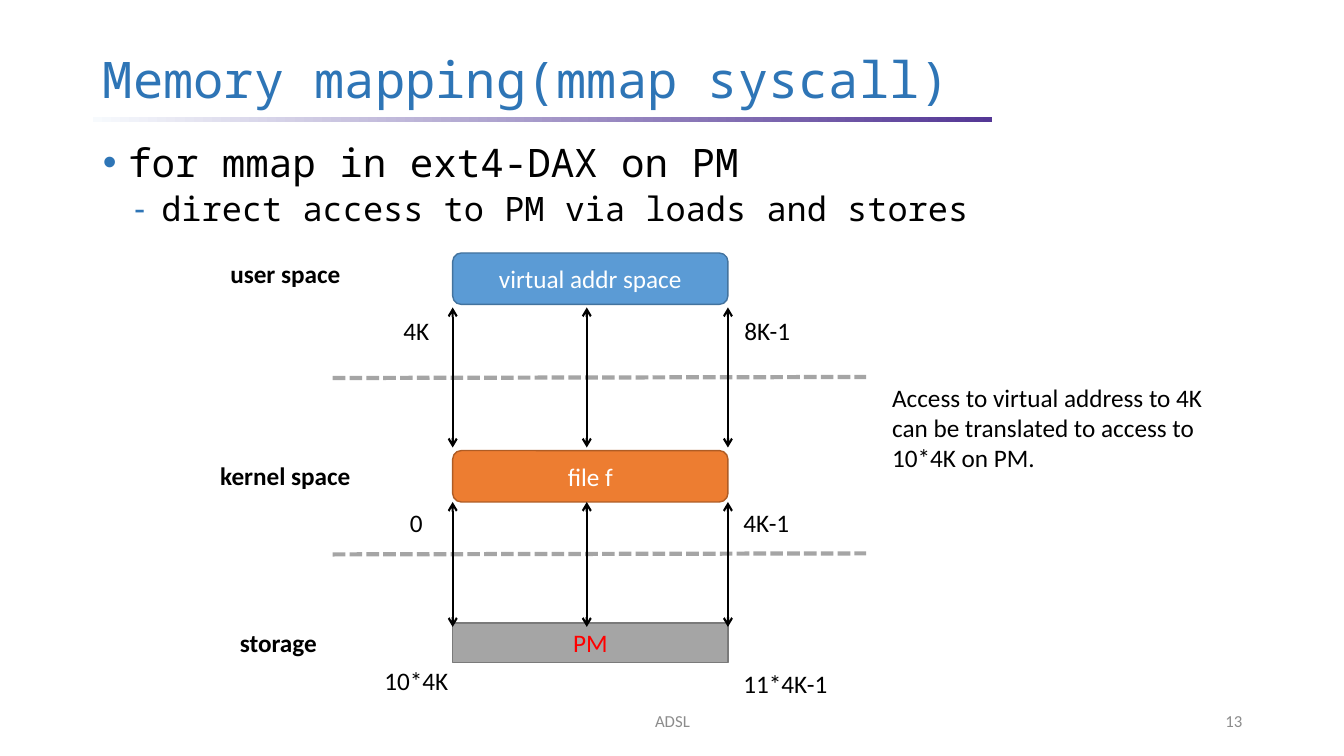
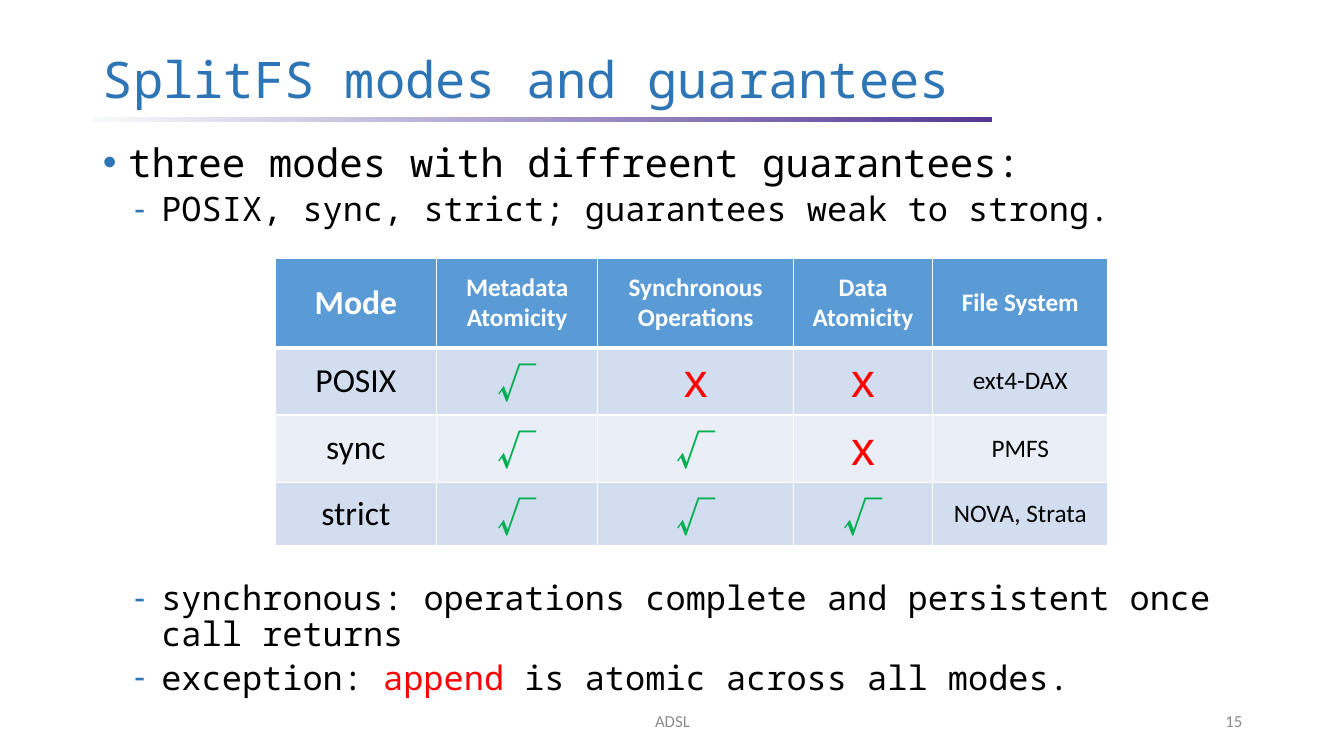
from lxml.etree import SubElement
from pptx import Presentation
from pptx.dml.color import RGBColor
from pptx.enum.dml import MSO_LINE
from pptx.enum.shapes import MSO_CONNECTOR, MSO_SHAPE
from pptx.enum.text import MSO_ANCHOR, MSO_AUTO_SIZE, PP_ALIGN
from pptx.oxml.ns import qn
from pptx.util import Inches, Pt

WHITE = RGBColor(0xFF, 0xFF, 0xFF)
BLACK = RGBColor(0x00, 0x00, 0x00)
RED = RGBColor(0xFF, 0x00, 0x00)
GREEN = RGBColor(0x00, 0xB0, 0x50)
TITLE_BLUE = RGBColor(0x2E, 0x75, 0xB6)
BLUE = RGBColor(0x5B, 0x9B, 0xD5)
BLUE_EDGE = RGBColor(0x43, 0x73, 0x9E)
ORANGE = RGBColor(0xED, 0x7D, 0x31)
ORANGE_EDGE = RGBColor(0xAF, 0x5C, 0x24)
GRAY = RGBColor(0xA5, 0xA5, 0xA5)
GRAY_EDGE = RGBColor(0x7A, 0x7A, 0x7A)
FOOTER_GRAY = RGBColor(0x8C, 0x8C, 0x8C)
RULE_START = RGBColor(0xF7, 0xFA, 0xFD)
RULE_END = RGBColor(0x54, 0x37, 0x95)
ROW_BANDS = (RGBColor(0xD2, 0xDE, 0xEF), RGBColor(0xEA, 0xEF, 0xF7))

MONO = "Noto Sans Mono"
SANS = "Calibri"
BULLETS = (("•", 0.25, 28), ("‐", 0.58, 24))
MARKS = {"√": (28, GREEN, "Noto Sans CJK SC", True), "x": (34, RED, "Arial", False)}


def box(left, top, width, height):
    return [Inches(value) for value in (left, top, width, height)]


def style_run(run, size, color, font=SANS, bold=False):
    run.font.size = Pt(size)
    run.font.color.rgb = color
    run.font.name = font
    run.font.bold = bold
    SubElement(run.font._element, qn("a:ea"), typeface=font)


def fill_frame(frame, text, size, color, align=PP_ALIGN.CENTER, font=SANS, bold=False):
    frame.text = text
    for paragraph in frame.paragraphs:
        paragraph.alignment = align
        for run in paragraph.runs:
            style_run(run, size, color, font, bold)


def add_label(slide, area, text, size=18, color=BLACK, align=PP_ALIGN.CENTER,
              bold=False, anchor=MSO_ANCHOR.TOP):
    frame = slide.shapes.add_textbox(*box(*area)).text_frame
    frame.word_wrap = True
    frame.vertical_anchor = anchor
    fill_frame(frame, text, size, color, align, bold=bold)


def add_block(slide, preset, area, text, fill, edge, color):
    block = slide.shapes.add_shape(preset, *box(*area))
    block.shadow.inherit = False
    block.fill.solid()
    block.fill.fore_color.rgb = fill
    block.line.color.rgb = edge
    block.line.width = Pt(1)
    block.text_frame.vertical_anchor = MSO_ANCHOR.MIDDLE
    fill_frame(block.text_frame, text, 18, color)


def add_line(slide, start, end, color, width, arrows=False):
    ends = [Inches(value) for value in (*start, *end)]
    line = slide.shapes.add_connector(MSO_CONNECTOR.STRAIGHT, *ends)
    line.line.color.rgb = color
    line.line.width = Pt(width)
    if arrows:
        for tip in ("a:headEnd", "a:tailEnd"):
            SubElement(line.get_or_add_ln(), qn(tip), type="arrow")
    else:
        line.line.dash_style = MSO_LINE.SQUARE_DOT
    SubElement(line._element.spPr, qn("a:effectLst"))


def add_list(body, items):
    body.left, body.top, body.width, body.height = box(0.92, 1.37, 11.5, 5.4)
    frame = body.text_frame
    frame.auto_size = MSO_AUTO_SIZE.NONE
    for index, (level, space, parts) in enumerate(items):
        paragraph = frame.add_paragraph() if index else frame.paragraphs[0]
        bullet, indent, size = BULLETS[level]
        paragraph.level = level
        properties = paragraph._p.get_or_add_pPr()
        properties.set("marL", str(Inches(indent)))
        properties.set("indent", str(Inches(-0.27)))
        tint = SubElement(properties, qn("a:buClr"))
        SubElement(tint, qn("a:srgbClr"), val=str(TITLE_BLUE))
        SubElement(properties, qn("a:buFont"), typeface="Arial")
        SubElement(properties, qn("a:buChar"), char=bullet)
        paragraph.line_spacing = 0.9
        paragraph.space_before = Pt(space)
        for text, color in parts:
            run = paragraph.add_run()
            run.text = text
            style_run(run, size, color, MONO)


def add_page(deck, title, number, items):
    slide = deck.slides.add_slide(deck.slide_layouts[1])
    heading = slide.shapes.title
    heading.left, heading.top, heading.width, heading.height = box(0.92, 0.47, 8.81, 0.69)
    heading.text_frame.auto_size = MSO_AUTO_SIZE.NONE
    heading.text_frame.vertical_anchor = MSO_ANCHOR.MIDDLE
    fill_frame(heading.text_frame, title, 36, TITLE_BLUE, PP_ALIGN.LEFT, MONO)
    heading.text_frame.paragraphs[0].line_spacing = 0.9

    rule = slide.shapes.add_shape(MSO_SHAPE.RECTANGLE, *box(0.92, 1.16, 8.92, 0.05))
    rule.shadow.inherit = False
    rule.line.fill.background()
    rule.fill.gradient()
    rule.fill.gradient_angle = 0
    for stop, color in zip(rule.fill.gradient_stops, (RULE_START, RULE_END)):
        stop.color.rgb = color

    add_list(slide.placeholders[1], items)
    for area, text, align in (((4.42, 6.95, 4.5, 0.4), "ADSL", PP_ALIGN.CENTER),
                              ((9.42, 6.95, 3, 0.4), number, PP_ALIGN.RIGHT)):
        add_label(slide, area, text, 12, FOOTER_GRAY, align, anchor=MSO_ANCHOR.MIDDLE)
    return slide


def add_mapping_diagram(slide, left, top):
    block_left, block_width = left + 2.67, 2.73
    rounded = MSO_SHAPE.ROUNDED_RECTANGLE
    tiers = (
        ("user space", 1.01, 0, rounded, 0, 0.51, "virtual addr space", BLUE, BLUE_EDGE, WHITE),
        ("kernel space", 1.01, 2.01, rounded, 1.96, 0.51, "file f", ORANGE, ORANGE_EDGE, WHITE),
        ("storage", 0.94, 3.66, MSO_SHAPE.RECTANGLE, 3.67, 0.39, "PM", GRAY, GRAY_EDGE, RED),
    )
    for name, center, name_top, preset, block_top, height, text, fill, edge, color in tiers:
        add_label(slide, (left + center - 0.94, top + name_top, 1.88, 0.4), name, bold=True)
        add_block(slide, preset, (block_left, top + block_top, block_width, height),
                  text, fill, edge, color)

    for boundary in (1.24, 2.99):
        add_line(slide, (left + 1.48, top + boundary),
                 (left + 6.77, top + boundary - 0.01), GRAY, 3)

    for start, end in ((0.54, 1.93), (2.47, 3.71)):
        for offset in (0, 1.33, block_width):
            across = block_left + offset
            add_line(slide, (across, top + start), (across, top + end), BLACK, 1.5, True)

    addresses = (("4K", 2.31, 0.57), ("8K-1", 5.79, 0.57), ("0", 2.31, 2.47),
                 ("4K-1", 5.78, 2.47), ("10*4K", 2.31, 4.04), ("11*4K-1", 5.97, 4.07))
    for address, center, offset in addresses:
        add_label(slide, (left + center - 0.6, top + offset, 1.2, 0.4), address)


def set_borders(cell, bottom):
    properties = cell._tc.get_or_add_tcPr()
    for side, width in (("L", 1), ("R", 1), ("T", 1), ("B", bottom)):
        edge = SubElement(properties, qn("a:ln" + side), w=str(Pt(width)))
        paint = SubElement(edge, qn("a:solidFill"))
        SubElement(paint, qn("a:srgbClr"), val=str(WHITE))


def cell_style(row, column, text):
    if row == 0:
        return 18 if column else 24, WHITE, SANS, True
    return MARKS.get(text, (18 if column else 24, BLACK, SANS, False))


def add_modes_table(slide, left, top):
    rows = (
        ("Mode", "Metadata\nAtomicity", "Synchronous\nOperations", "Data\nAtomicity",
         "File System"),
        ("POSIX", "√", "x", "x", "ext4-DAX"),
        ("sync", "√", "√", "x", "PMFS"),
        ("strict", "√", "√", "√", "NOVA, Strata"),
    )
    widths = (1.6, 1.6, 1.94, 1.38, 1.74)
    heights = (0.89, 0.63, 0.63, 0.63)
    area = box(left, top, sum(widths), sum(heights))
    modes = slide.shapes.add_table(len(rows), len(widths), *area).table
    for column, width in zip(modes.columns, widths):
        column.width = Inches(width)
    for row, (texts, height) in enumerate(zip(rows, heights)):
        modes.rows[row].height = Inches(height)
        for column, text in enumerate(texts):
            cell = modes.cell(row, column)
            size, color, font, bold = cell_style(row, column, text)
            fill_frame(cell.text_frame, text, size, color, font=font, bold=bold)
            cell.vertical_anchor = MSO_ANCHOR.MIDDLE
            set_borders(cell, 1 if row else 3)
            cell.fill.solid()
            cell.fill.fore_color.rgb = ROW_BANDS[(row - 1) % 2] if row else BLUE


def build_mapping_slide(deck):
    slide = add_page(deck, "Memory mapping(mmap syscall)", "13", (
        (0, 0, [("for mmap in ext4-DAX on PM", BLACK)]),
        (1, 5, [("direct access to PM via loads and stores", BLACK)]),
    ))
    add_mapping_diagram(slide, 1.82, 2.51)
    add_label(slide, (8.75, 3.74, 3.67, 1.01),
              "Access to virtual address to 4K can be translated to access to 10*4K on PM.",
              align=PP_ALIGN.LEFT)


def build_modes_slide(deck):
    slide = add_page(deck, "SplitFS modes and guarantees", "15", (
        (0, 0, [("three modes with diffreent guarantees:", BLACK)]),
        (1, 5, [("POSIX, sync, strict; guarantees weak to strong.", BLACK)]),
        (1, 252, [("synchronous: operations complete and persistent once call returns", BLACK)]),
        (1, 5, [("exception: ", BLACK), ("append", RED),
                (" is atomic across all modes.", BLACK)]),
    ))
    add_modes_table(slide, 2.73, 2.56)


def main():
    deck = Presentation()
    deck.slide_width, deck.slide_height = Inches(13.33), Inches(7.5)
    build_mapping_slide(deck)
    build_modes_slide(deck)
    deck.save("out.pptx")


if __name__ == "__main__":
    main()
